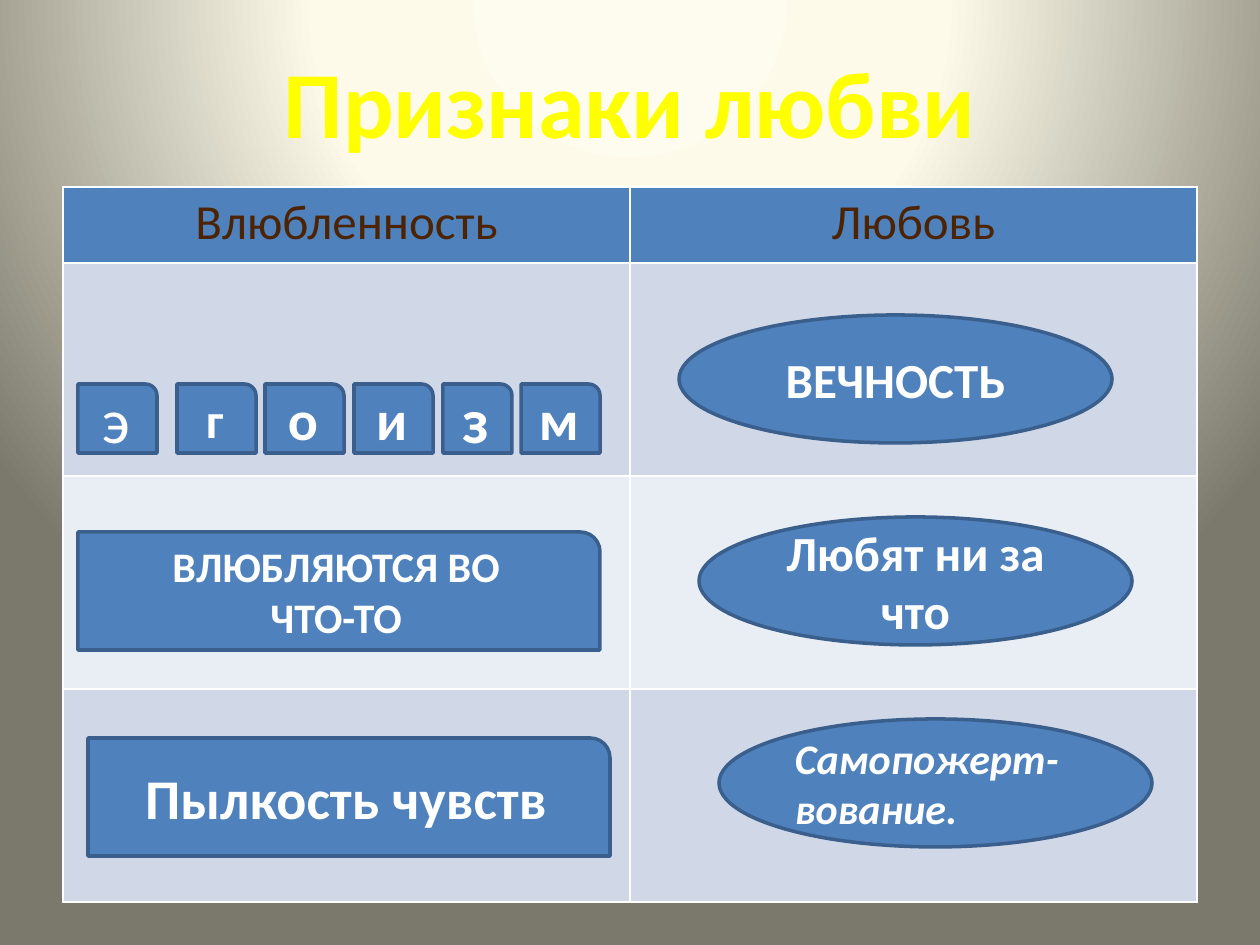
from pptx import Presentation
from pptx.dml.color import RGBColor
from pptx.enum.shapes import MSO_SHAPE as Shape
from pptx.enum.text import MSO_ANCHOR as Anchor, PP_ALIGN as Align
from pptx.oxml import parse_xml
from pptx.util import Emu, Pt

FONT = "Calibri"
BLUE, OUTLINE, WHITE = "4F81BD", "3A5F8C", "FFFFFF"
BROWN, YELLOW = "4C2403", "FFFF00"
BANDS = ["D0D8E8", "E9EDF4", "D0D8E8"]
GLOW = [(0, "FEFCEE"), (40, "FDFAEA"), (100, "7B796B")]
A_NS = "http://schemas.openxmlformats.org/drawingml/2006/main"


def px(n):
    return Emu(round(n * 914400 / 126))


def place(box):
    return [px(n) for n in box]


def color(value):
    return RGBColor.from_string(value)


def write(frame, *paragraphs, size, ink=WHITE, bold=True, italic=False,
          align=Align.CENTER):
    """Fill a text frame; a paragraph is a list of runs or a plain string."""
    frame.word_wrap = True
    for i, runs in enumerate(paragraphs):
        paragraph = frame.paragraphs[0] if i == 0 else frame.add_paragraph()
        paragraph.alignment = align
        for words in [runs] if isinstance(runs, str) else runs:
            run = paragraph.add_run()
            run.text = words
            font = run.font
            font.name, font.size = FONT, Pt(size)
            font.bold, font.italic = bold, italic
            font.color.rgb = color(ink)


def paint_background(slide):
    # Radial glow centred above the slide
    slide.background.fill.gradient()
    stops = "".join(f'<a:gs pos="{at * 1000}"><a:srgbClr val="{c}"/></a:gs>'
                    for at, c in GLOW)
    glow = parse_xml(
        f'<a:gradFill xmlns:a="{A_NS}" rotWithShape="1"><a:gsLst>{stops}</a:gsLst>'
        '<a:path path="circle"><a:fillToRect l="50000" t="-80000" r="50000" b="180000"/>'
        '</a:path></a:gradFill>')
    flat = next(slide.background._cSld.iter(f"{{{A_NS}}}gradFill"))
    flat.getparent().replace(flat, glow)


def add_title(slide, box):
    title = slide.shapes.title
    title.left, title.top, title.width, title.height = place(box)
    title.text_frame.vertical_anchor = Anchor.MIDDLE
    write(title.text_frame, "Признаки любви", size=54, ink=YELLOW)


def add_comparison(slide, box, header_height):
    table = slide.shapes.add_table(1 + len(BANDS), 2, *place(box)).table
    row_height = (box[3] - header_height) / len(BANDS)
    for column in table.columns:
        column.width = px(box[2] / 2)
    for i, fill in enumerate([BLUE, *BANDS]):
        table.rows[i].height = px(row_height if i else header_height)
        for cell in table.rows[i].cells:
            cell.fill.solid()
            cell.fill.fore_color.rgb = color(fill)
    for cell, heading in zip(table.rows[0].cells, ["Влюбленность", "Любовь"]):
        write(cell.text_frame, heading, size=28, ink=BROWN, bold=False)


def add_badge(slide, kind, box, *paragraphs, **style):
    badge = slide.shapes.add_shape(kind, *place(box))
    badge.shadow.inherit = False
    badge.fill.solid()
    badge.fill.fore_color.rgb = color(BLUE)
    badge.line.color.rgb = color(OUTLINE)
    badge.line.width = Pt(2)
    badge.text_frame.vertical_anchor = Anchor.MIDDLE
    write(badge.text_frame, *paragraphs, **style)


def add_infatuation(slide, left, top):
    # Letter tiles: letter, offset, width, size, bold
    tiles = [("э", 0, 79, 36, False), ("г", 99, 79, 28, True),
             ("о", 187, 79, 32, True), ("и", 276, 79, 32, True),
             ("з", 365, 69, 36, True), ("м", 443, 79, 32, True)]
    for letter, dx, width, size, bold in tiles:
        add_badge(slide, Shape.ROUND_1_RECTANGLE, (left + dx, top, width, 69),
                  letter, size=size, bold=bold)
    # Wide plates
    plates = [(0, 148, ["ВЛЮБЛЯЮТСЯ ВО", "ЧТО-ТО"], 24),
              (10, 354, ["Пылкость чувств"], 32)]
    for dx, dy, lines, size in plates:
        add_badge(slide, Shape.ROUND_1_RECTANGLE,
                  (left + dx, top + dy, 522, 118), *lines, size=size)


def add_love(slide, left, top):
    # Ovals step right as they go down
    ovals = [("ВЕЧНОСТЬ", dict(size=28)),
             ("Любят ни за что", dict(size=28)),
             (["Самопожерт-вование", "."],
              dict(size=24, italic=True, align=Align.LEFT))]
    for i, (words, style) in enumerate(ovals):
        add_badge(slide, Shape.OVAL, (left + 20 * i, top + 202 * i, 433, 128),
                  words, **style)


def main():
    deck = Presentation()
    deck.slide_width, deck.slide_height = px(1260), px(945)
    slide = deck.slides.add_slide(deck.slide_layouts[5])
    paint_background(slide)
    add_title(slide, (63, 35, 1134, 132))
    add_comparison(slide, (63, 187, 1134, 715), header_height=76)
    add_infatuation(slide, 78, 384)
    add_love(slide, 679, 315)
    deck.save("out.pptx")


if __name__ == "__main__":
    main()
